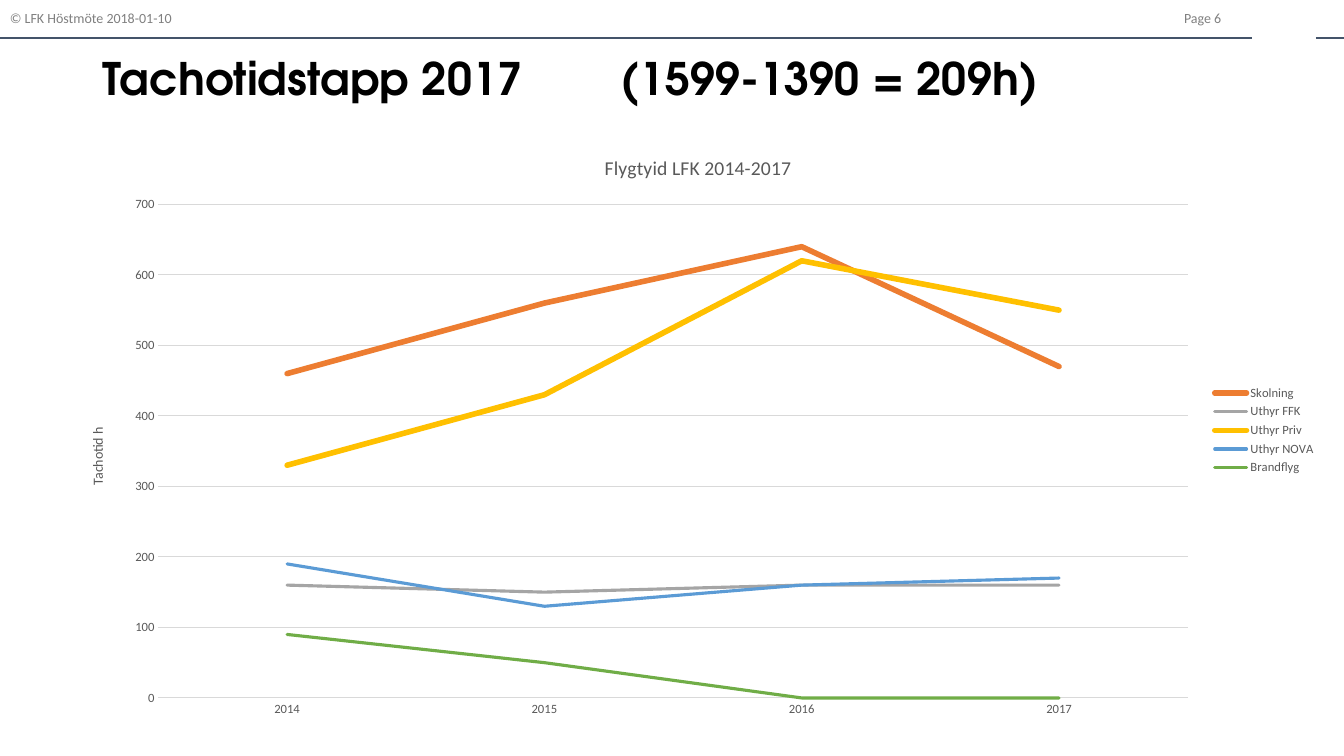
import pptx
import pptx.chart.data
import pptx.dml.color
import pptx.enum.chart
import pptx.enum.shapes
import pptx.enum.text
import pptx.oxml.ns
import pptx.oxml.xmlchemy
import pptx.util
from pptx.util import Inches

XL = pptx.enum.chart
ALIGN = pptx.enum.text.PP_ALIGN
QN = pptx.oxml.ns.qn
HEX = {
    "navy": "44546A", "gray": "808080", "black": "000000",
    "text": "595959", "grid": "D9D9D9", "orange": "ED7D31",
    "silver": "A5A5A5", "gold": "FFC000", "blue": "5B9BD5",
    "green": "70AD47",
}
YEARS = ["2014", "2015", "2016", "2017"]
HOURS = [
    ("Skolning", [460, 560, 640, 470], "orange", 4),
    ("Uthyr FFK", [160, 150, 160, 160], "silver", 2.25),
    ("Uthyr Priv", [330, 430, 620, 550], "gold", 4),
    ("Uthyr NOVA", [190, 130, 160, 170], "blue", 2.25),
    ("Brandflyg", [90, 50, 0, 0], "green", 2.25),
]


class Deck:
    body = "Calibri"
    head = "TeX Gyre Adventor"

    def __init__(self, slide):
        self.slide = slide

    def color(self, name):
        return pptx.dml.color.RGBColor.from_string(HEX[name])

    def node(self, tag, **attrs):
        item = pptx.oxml.xmlchemy.OxmlElement(tag)
        for key, val in attrs.items():
            item.set(key, str(val))
        return item

    def font(self, font, size, color, face=None, bold=False):
        font.name = face or self.body
        font.size = pptx.util.Pt(size)
        font.bold = bold
        font.color.rgb = self.color(color)

    def stroke(self, line, color, width):
        line.color.rgb = self.color(color)
        line.width = pptx.util.Pt(width)

    def rule(self, left, right, top):
        line = self.slide.shapes.add_connector(
            pptx.enum.shapes.MSO_CONNECTOR.STRAIGHT,
            Inches(left), Inches(top), Inches(right), Inches(top))
        self.stroke(line.line, "navy", 1.5)
        line.element.spPr.append(self.node("a:effectLst"))

    def text(self, box, words, size, color, align=ALIGN.LEFT, face=None,
             bold=False, tab=None, space=None):
        frame = self.slide.shapes.add_textbox(*map(Inches, box)).text_frame
        frame.word_wrap = True
        frame.vertical_anchor = pptx.enum.text.MSO_ANCHOR.MIDDLE
        para = frame.paragraphs[0]
        if tab:
            tabs = self.node("a:tabLst")
            tabs.append(self.node("a:tab", pos=Inches(tab), algn="l"))
            para._p.get_or_add_pPr().append(tabs)
        para.alignment = align
        if space:
            para.line_spacing = space
        run = para.add_run()
        run.text = words
        self.font(run.font, size, color, face, bold)

    def label(self, title, words, size):
        run = title.text_frame.paragraphs[0].add_run()
        run.text = words
        self.font(run.font, size, "text")

    def place(self, chart, **part):
        """Fix the inner plot area as shares of the chart frame."""
        area = chart.element.find(".//" + QN("c:plotArea"))
        old = area.find(QN("c:layout"))
        if old is not None:
            area.remove(old)
        layout = self.node("c:layout")
        manual = self.node("c:manualLayout")
        layout.append(manual)
        rows = {"layoutTarget": "inner", "xMode": "edge", "yMode": "edge"}
        for tag, val in {**rows, **part}.items():
            manual.append(self.node("c:" + tag, val=val))
        area.insert(0, layout)

    def chart(self, box, title, side, years, rows):
        data = pptx.chart.data.CategoryChartData()
        data.categories = years
        for name, vals, _, _ in rows:
            data.add_series(name, vals)
        chart = self.slide.shapes.add_chart(
            XL.XL_CHART_TYPE.LINE, *map(Inches, box), data).chart
        self.font(chart.font, 10, "black")
        chart.has_title = True
        self.label(chart.chart_title, title, 14)
        chart.chart_title.include_in_layout = False

        # Legend
        chart.has_legend = True
        chart.legend.position = XL.XL_LEGEND_POSITION.RIGHT
        chart.legend.include_in_layout = False
        self.font(chart.legend.font, 9, "text")

        # Axes
        years_axis, hours_axis = chart.category_axis, chart.value_axis
        for axis in (years_axis, hours_axis):
            axis.major_tick_mark = XL.XL_TICK_MARK.NONE
            axis.minor_tick_mark = XL.XL_TICK_MARK.NONE
            self.font(axis.tick_labels.font, 9, "text")
        self.stroke(years_axis.format.line, "grid", 0.75)
        hours_axis.format.line.fill.background()
        hours_axis.minimum_scale = 0
        hours_axis.maximum_scale = 700
        hours_axis.major_unit = 100
        self.stroke(hours_axis.major_gridlines.format.line, "grid", 0.75)
        hours_axis.has_title = True
        self.label(hours_axis.axis_title, side, 10)

        # Series
        plot = chart.plots[0]
        plot.vary_by_categories = False
        for row, (_, _, color, width) in zip(plot.series, rows):
            row.smooth = False
            row.marker.style = XL.XL_MARKER_STYLE.NONE
            self.stroke(row.format.line, color, width)
        for line in chart.element.xpath(".//c:ser/c:spPr/a:ln"):
            line.set("cap", "rnd")
        self.place(chart, x=0.07, y=0.12, w=0.82, h=0.83)


def main():
    show = pptx.Presentation()
    show.slide_width = Inches(13.33)
    show.slide_height = Inches(7.5)
    deck = Deck(show.slides.add_slide(show.slide_layouts[6]))

    # Header
    deck.rule(0, 12.42, 0.38)
    deck.rule(13.05, 13.33, 0.38)
    deck.text((0, -0.05, 3.57, 0.45), "© LFK Höstmöte 2018-01-10", 10, "gray")
    deck.text((11.29, -0.05, 0.92, 0.45), "Page 6", 10, "gray", ALIGN.RIGHT)

    # Title
    deck.text((0.92, 0.49, 11.5, 0.62),
              "Tachotidstapp 2017\t(1599-1390 = 209h)", 32, "black",
              face=deck.head, bold=True, tab=5.14, space=0.9)

    # Flight hours
    deck.chart((0.7, 1.32, 12.45, 5.9), "Flygtyid LFK 2014-2017",
               "Tachotid h", YEARS, HOURS)
    show.save("out.pptx")


if __name__ == "__main__":
    main()
